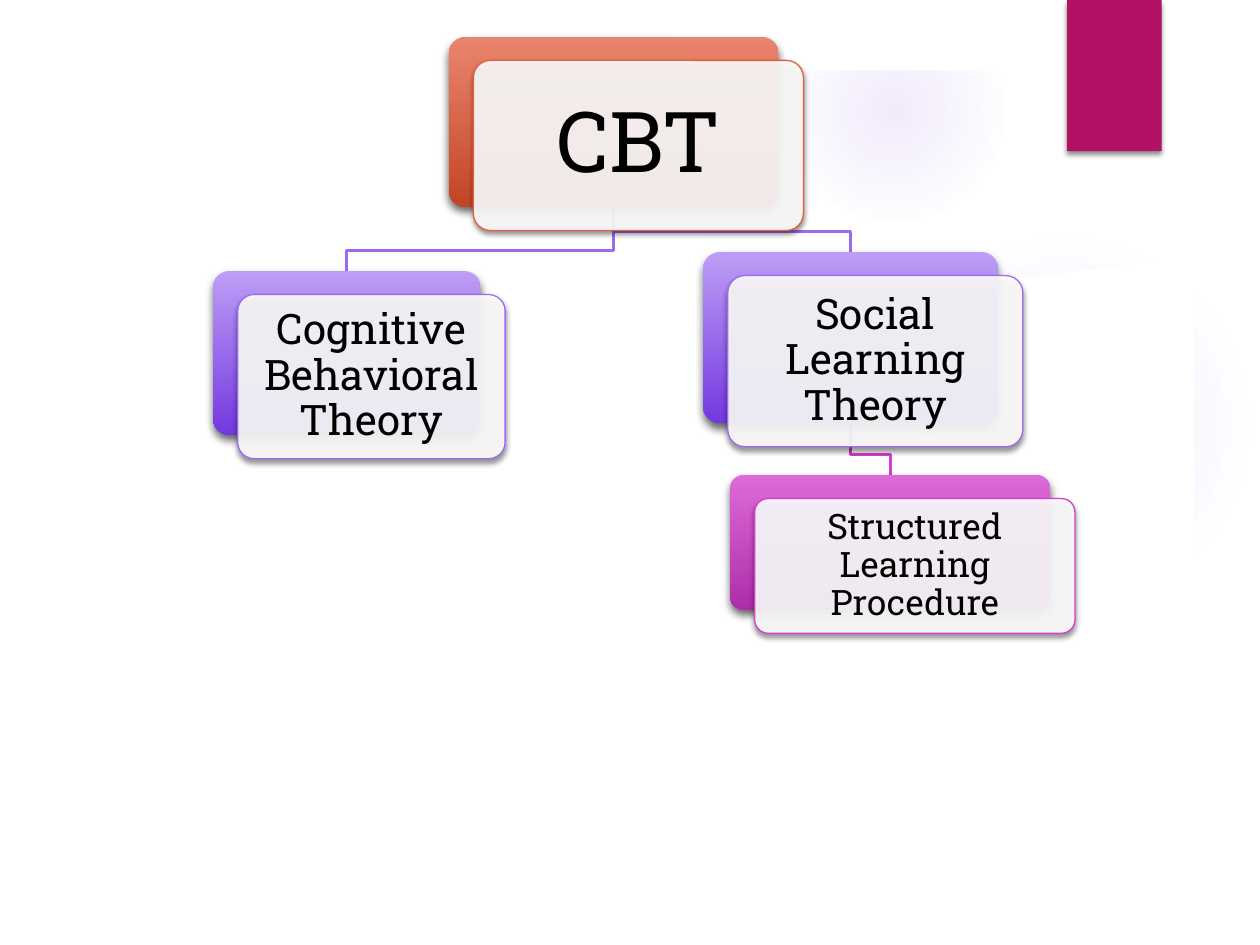
from lxml import etree
from pptx import Presentation
from pptx import util as u
from pptx.dml.color import RGBColor
from pptx.enum import shapes, text
from pptx.oxml import parse_xml
from pptx.oxml.ns import nsdecls, qn

HUES = {
    "white": "FFFFFF", "black": "000000", "tab": "B31166", "glow": "9B6BF2",
    "orange": "E45F3C", "violet": "9B6BF2", "pink": "D53DD0",
}
FADES = {
    "orange": ("EA856D", "C24525"),
    "violet": ("BD9EF6", "7438E0"),
    "pink": ("DD6AD9", "AE2EAA"),
}
FONT = "Roboto Slab"
NODES = {
    "root": ("CBT", "orange", 48, 14.4, (256.4, 21, 188.6, 97.2)),
    "cog": ("Cognitive Behavioral Theory", "violet", 24, 7.2, (121.8, 154.8, 152.8, 93.8)),
    "social": ("Social Learning Theory", "violet", 24, 7.2, (401.8, 144, 168.6, 97.8)),
    "steps": ("Structured Learning Procedure", "pink", 20, 6, (417.2, 271.4, 183, 77)),
}
LINKS = [("social", "steps"), ("root", "social"), ("root", "cog")]
GLOWS = [
    ((496, 131.8, 221.8, 221.8), ((0, 7), (36, 6), (69, 0))),
    ((447.8, 0, 126, 126), ((0, 14), (36, 7), (73, 0))),
]
PAPER = [
    (38, 146), (38, 503), (682, 503), (682, 146), (652, 150.5), (594, 157.7),
    (536, 163.4), (478, 166.3), (422, 168.5), (341, 168.5), (267, 166.7),
    (199, 162.7), (125, 156.2), (71, 150.5),
]
SHIFT = (14.1, 13.5)
ELBOW = 11.6
SOFT = (45, 3, 2)
DEEP = (60, 5, 3)

deck = Presentation()
deck.slide_width, deck.slide_height = u.Pt(720), u.Pt(540)
slide = deck.slides.add_slide(deck.slide_layouts[6])
KIND = shapes.MSO_SHAPE


def hue(name):
    return RGBColor.from_string(HUES.get(name, name))


def paint(shape, fill):
    shape.fill.solid()
    shape.fill.fore_color.rgb = hue(fill)


def block(kind, box, shade=None):
    shape = slide.shapes.add_shape(kind, *(u.Pt(v) for v in box))
    shape.shadow.inherit = False
    shape.line.fill.background()
    if kind == KIND.ROUNDED_RECTANGLE:
        shape.adjustments[0] = 0.1
    if shade:
        alpha, blur, dist = shade
        fx = shape._element.spPr.find(qn("a:effectLst"))
        fx.append(parse_xml(
            f'<a:outerShdw {nsdecls("a")} blurRad="{u.Pt(blur)}" dist="{u.Pt(dist)}" '
            f'dir="5400000" rotWithShape="0"><a:srgbClr val="{HUES["black"]}">'
            f'<a:alpha val="{alpha * 1000}"/></a:srgbClr></a:outerShdw>'))
    return shape


def trace(points, closed):
    spots = [(u.Pt(x), u.Pt(y)) for x, y in points]
    pen = slide.shapes.build_freeform(*spots[0], scale=1.0)
    pen.add_line_segments(spots[1:], close=closed)
    shape = pen.convert_to_shape()
    shape.shadow.inherit = False
    return shape


def glow(box, stops):
    shape = block(KIND.OVAL, box)
    shape.fill.background()
    marks = "".join(
        f'<a:gs pos="{at * 1000}"><a:srgbClr val="{HUES["glow"]}">'
        f'<a:alpha val="{alpha * 1000}"/></a:srgbClr></a:gs>' for at, alpha in stops)
    props = shape._element.spPr
    props.replace(props.find(qn("a:noFill")), parse_xml(
        f'<a:gradFill {nsdecls("a")}><a:gsLst>{marks}</a:gsLst><a:path path="circle">'
        '<a:fillToRect l="50000" t="50000" r="50000" b="50000"/></a:path></a:gradFill>'))


def link(top, low):
    x, y, w, h = NODES[top][4]
    left, end, wide, _ = NODES[low][4]
    start, stop = x + w / 2, left + wide / 2
    bend = end - ELBOW
    line = trace([(start, y + h), (start, bend), (stop, bend), (stop, end)], False)
    line.fill.background()
    line.line.color.rgb = hue(NODES[low][1])
    line.line.width = u.Pt(1.5)


def node(label, tint, size, inset, box):
    back = block(KIND.ROUNDED_RECTANGLE, box, DEEP)
    back.fill.gradient()
    back.fill.gradient_angle = 270
    for stop, shade, at in zip(back.fill.gradient_stops, FADES[tint], (0, 1)):
        stop.color.rgb = hue(shade)
        stop.position = at

    x, y, w, h = box
    card = block(KIND.ROUNDED_RECTANGLE, (x + SHIFT[0], y + SHIFT[1], w, h), SOFT)
    paint(card, "white")
    tone = card._element.spPr.find(qn("a:solidFill"))[0]
    etree.SubElement(tone, qn("a:alpha")).set("val", "90000")
    card.line.color.rgb = hue(tint)
    card.line.width = u.Pt(0.75)

    frame = card.text_frame
    frame.word_wrap = True
    frame.vertical_anchor = text.MSO_ANCHOR.MIDDLE
    frame.margin_left = frame.margin_right = u.Pt(inset)
    frame.margin_top = frame.margin_bottom = u.Pt(inset)
    para = frame.paragraphs[0]
    para.text = label
    para.alignment = text.PP_ALIGN.CENTER
    para.line_spacing = 0.9
    para.font.name = FONT
    para.font.size = u.Pt(size)
    para.font.color.rgb = hue("black")


for item in GLOWS:
    glow(*item)
sheet = trace(PAPER, True)
paint(sheet, "white")
sheet.line.fill.background()
paint(block(KIND.RECTANGLE, (0, 0, 720, 40.3)), "white")
paint(block(KIND.RECTANGLE, (609.8, 0, 54, 86.4), SOFT), "tab")

for pair in LINKS:
    link(*pair)
for item in NODES.values():
    node(*item)

deck.save("out.pptx")
